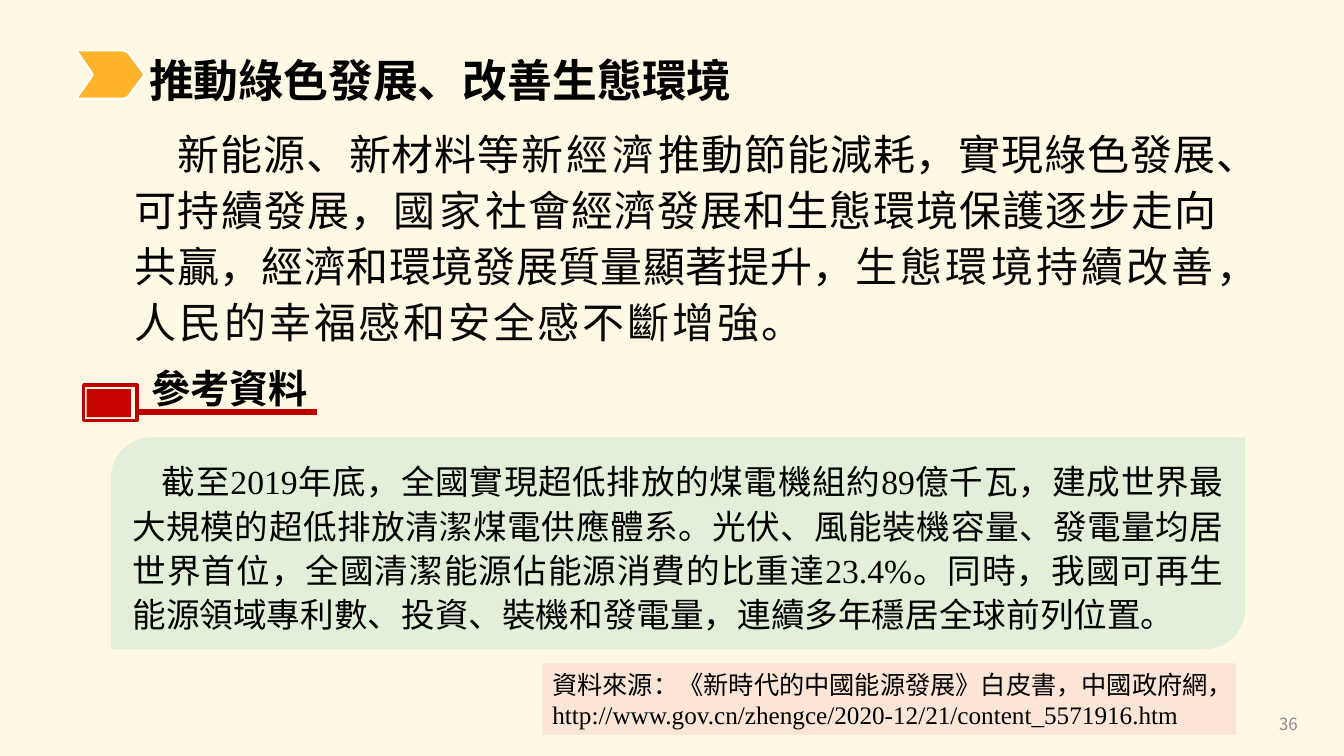
from lxml import etree
from pptx import Presentation
from pptx.dml.color import RGBColor
from pptx.enum.shapes import MSO_CONNECTOR, MSO_SHAPE as SHAPE
from pptx.enum.text import MSO_ANCHOR as ANCHOR, PP_ALIGN as ALIGN
from pptx.oxml.ns import qn
from pptx.util import Pt

PX = 9144
SC, TC = "Noto Sans CJK SC", "Noto Sans CJK TC"
ROBOTO, TIMES = "Roboto", "Times New Roman"
BLACK, INK = "000000", "080808"

PAGE_NUMBER = [("36", SC, SC, "8C8C8C", 0)]
TITLE = [("推動綠色發展、改善生態環境", ROBOTO, TC, BLACK, 0)]
BODY = [
    ("新能源、新材料等", ROBOTO, SC, BLACK, 0),
    ("新經濟", ROBOTO, SC, INK, 2),
    ("推動節能減耗，實現綠色發展、可持續發展，", ROBOTO, SC, BLACK, 0),
    ("國家", ROBOTO, SC, INK, 2),
    ("社會經濟發展和生態環境保護逐步走向共贏，經濟和環境發展質量顯著提升，", ROBOTO, SC, BLACK, 0),
    ("生態環境持續改善，人民的幸福感和安全感不斷增強。", ROBOTO, TC, INK, 2),
]
REFERENCE_HEADING = [("參考資料", TC, TC, BLACK, 0)]
REFERENCE = [(
    "截至2019年底，全國實現超低排放的煤電機組約89億千瓦，建成世界最大規模的超低排放清潔煤電供應體系。"
    "光伏、風能裝機容量、發電量均居世界首位，全國清潔能源佔能源消費的比重達23.4%。"
    "同時，我國可再生能源領域專利數、投資、裝機和發電量，連續多年穩居全球前列位置。",
    TIMES, SC, BLACK, 0)]
CITATION = [
    ("資料來源：《新時代的中國能源發展》白皮書，中國政府網，", SC, TC, BLACK, 0),
    ("http://www.gov.cn/zhengce/2020-12/21/content_5571916.htm", TIMES, TC, BLACK, 0),
]
CHEVRON_AXIS = 74
CHEVRON_TOP = [(92, 74), (91, 72), (77, 52), (76, 51), (78, 50),
               (122, 50), (125, 51), (127, 52), (142, 72), (143, 74)]


def color(code):
    return RGBColor.from_string(code)


def px(*lengths):
    return [length * PX for length in lengths]


def paint(shape, fill=None, line=None, width=0):
    shape.shadow.inherit = False
    if fill:
        shape.fill.solid()
        shape.fill.fore_color.rgb = color(fill)
    else:
        shape.fill.background()
    if line:
        shape.line.color.rgb = color(line)
        shape.line.width = Pt(width)
    else:
        shape.line.fill.background()
    return shape


def write(shape, parts, size, spacing=None, align=ALIGN.LEFT,
          anchor=ANCHOR.TOP, bold=False, indent=0):
    frame = shape.text_frame
    frame.word_wrap = True
    frame.vertical_anchor = anchor
    paragraph = frame.paragraphs[0]
    paragraph.alignment = align
    if spacing:
        paragraph.line_spacing = Pt(spacing)
    if indent:
        properties = paragraph._p.get_or_add_pPr()
        properties.set("marL", "0")
        properties.set("indent", str(indent * PX))
    for words, latin, asian, ink, tracking in parts:
        run = paragraph.add_run()
        run.text = words
        font = run.font
        font.size = Pt(size)
        font.bold = bold
        font.name = latin
        font.color.rgb = color(ink)
        properties = run._r.get_or_add_rPr()
        if tracking:
            properties.set("spc", str(tracking * 100))
        etree.SubElement(properties, qn("a:ea")).set("typeface", asian)


deck = Presentation()
deck.slide_width, deck.slide_height = px(1333, 750)
slide = deck.slides.add_slide(deck.slide_layouts[6])
slide.background.fill.solid()
slide.background.fill.fore_color.rgb = color("FFF8E5")
shapes = slide.shapes

write(shapes.add_textbox(*px(997, 698, 300, 40)), PAGE_NUMBER, 12,
      align=ALIGN.RIGHT, anchor=ANCHOR.MIDDLE)
write(shapes.add_textbox(*px(124, 117, 1093, 234)), BODY, 30, 40,
      align=ALIGN.JUSTIFY, indent=42)

reference_card = paint(
    shapes.add_shape(SHAPE.ROUND_2_DIAG_RECTANGLE, *px(110, 434, 1125, 210)), "E2F0D9")
reference_card.adjustments[0] = 0.19
reference_card.adjustments[1] = 0
reference_card.text_frame.margin_top = 10 * PX
write(reference_card, REFERENCE, 24, 31.6, align=ALIGN.JUSTIFY,
      anchor=ANCHOR.MIDDLE, indent=29)

write(shapes.add_textbox(*px(138, 45, 644, 66)), TITLE, 32, 40, bold=True)

chevron_bottom = [(x, 2 * CHEVRON_AXIS - y) for x, y in CHEVRON_TOP[-2:0:-1]]
chevron = shapes.build_freeform(*CHEVRON_TOP[0], scale=PX)
chevron.add_line_segments(CHEVRON_TOP[1:] + chevron_bottom, close=True)
paint(chevron.convert_to_shape(), "FDB42A", "FFFFFF", 1.5)

paint(shapes.add_shape(SHAPE.RECTANGLE, *px(83, 382, 53, 35)), line="C00000", width=2.25)
paint(shapes.add_shape(SHAPE.RECTANGLE, *px(86, 386, 44, 28)), "C80404")
write(shapes.add_textbox(*px(140, 348, 234, 65)), REFERENCE_HEADING, 28, 40, bold=True)
underline = shapes.add_connector(MSO_CONNECTOR.STRAIGHT, *px(138, 409, 314, 409))
underline.line.color.rgb = color("C00000")
underline.line.width = Pt(4.5)
etree.SubElement(underline._element.spPr, qn("a:effectLst"))

citation_box = paint(shapes.add_shape(SHAPE.RECTANGLE, *px(538, 658, 688, 71)), "FBE5D6")
write(citation_box, CITATION, 18, 22, anchor=ANCHOR.MIDDLE)

deck.save("out.pptx")
